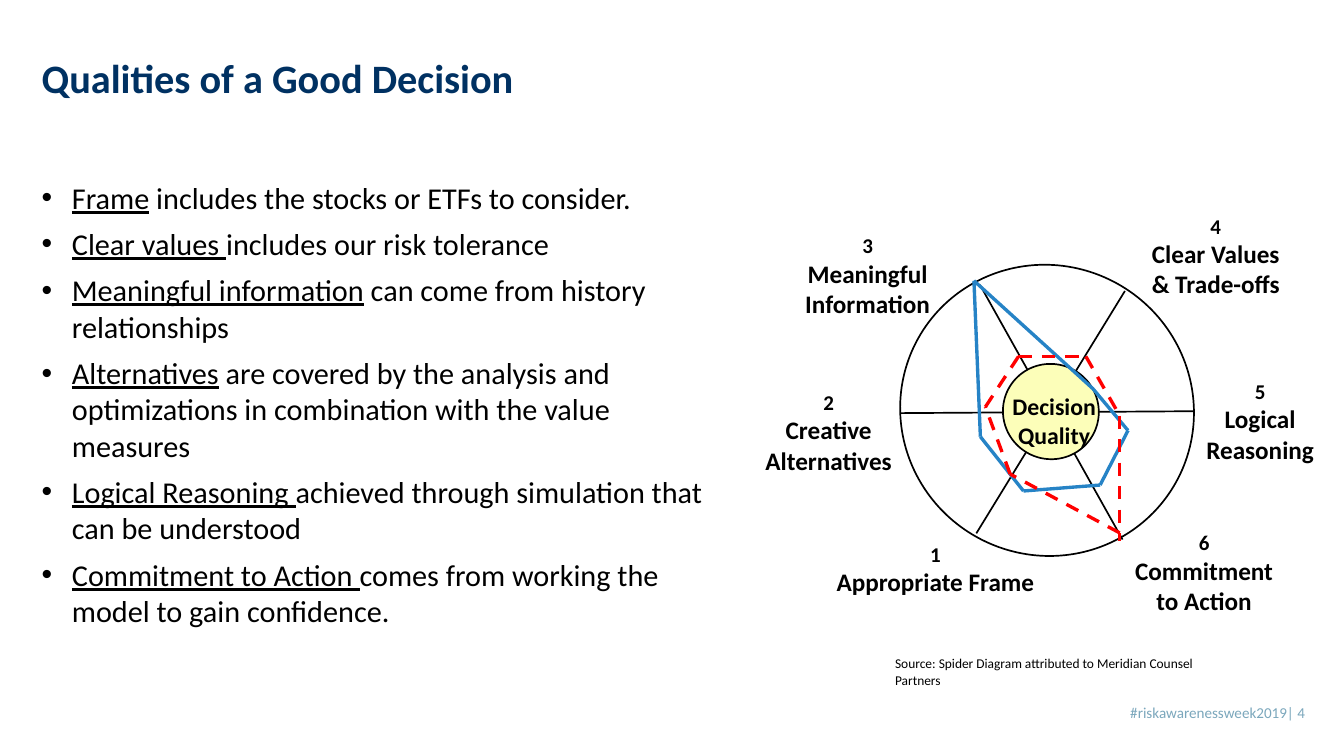
"""Build the slide on the qualities of a good decision, with its spider diagram."""
from itertools import pairwise

from pptx import Presentation
from pptx import util as u
from pptx.dml.color import RGBColor
from pptx.enum import dml, shapes, text
from pptx.oxml.ns import qn
from lxml import etree

TITLE = "Qualities of a Good Decision"
QUALITIES = [
    ("Frame", " includes the stocks or ETFs to consider."),
    ("Clear values ", "includes our risk tolerance"),
    ("Meaningful information", " can come from history relationships"),
    ("Alternatives", " are covered by the analysis and optimizations in combination with the value measures"),
    ("Logical Reasoning ", "achieved through simulation that can be understood"),
    ("Commitment to Action ", "comes from working the model to gain confidence."),
]
HUB = ["Decision", "Quality"]
SPOKE_LABELS = [
    (["1", "Appropriate Frame"], (34.8, 22.58, 8.97, 2.64)),
    (["2", "Creative", "Alternatives"], (31.7, 16.21, 6.2, 3.94)),
    (["3", "Meaningful", "Information"], (33.4, 9.63, 6.07, 3.94)),
    (["4", "Clear Values", "& Trade-offs"], (48.03, 8.81, 6.05, 3.94)),
    (["5", "Logical", "Reasoning"], (50.34, 15.75, 5.16, 3.94)),
    (["6", "Commitment", "to Action"], (47.35, 22.1, 6.43, 3.94)),
]
SPOKES = [
    [(41.15, 11.96), (47.14, 22.66)],
    [(37.82, 17.35), (50.14, 17.27)],
    [(47.24, 12.22), (41, 22.4)],
]
SOLID_PROFILE = [(41.17, 18.34), (40.9, 11.79), (45.9, 16.33), (47.37, 18.08),
                 (46.2, 20.37), (42.98, 20.62), (41.17, 18.34)]
DASHED_PROFILE = [(47.02, 22.38), (42.42, 19.91), (41.38, 17.09), (42.77, 14.97),
                  (45.6, 14.97), (47.02, 17.45), (47.02, 22.73)]
SOURCE = "Source: Spider Diagram attributed to Meridian Counsel Partners"
FOOTER = "#riskawarenessweek2019| 4"

THEME = {
    "font": "Calibri",
    "ink": "000000", "title": "003162", "footer": "7BA7BC", "rim": "FFFFFF",
    "hub": "FCFEB9", "solid": "2683C6", "dashed": "FF0000",
    "title_size": 48, "body_size": 36, "label_size": 30, "hub_size": 28.3,
    "number_size": 25, "footer_size": 18, "source_size": 16,
    "thin": 2, "thick": 4,
}
DEFAULT_INSETS = (0.25, 0.13)
LABEL_INSETS = (0.28, 0.15)
SOURCE_INSETS = (0.43, 0.2)


def color(name):
    return RGBColor.from_string(THEME[name])


def format_run(run, size, ink="ink", bold=False, underline=False):
    font = run.font
    font.name = THEME["font"]
    font.size = u.Pt(THEME[size])
    font.color.rgb = color(ink)
    font.bold = bold
    font.underline = underline


def add_text(slide, box, lines, sizes, ink="ink", bold=False, align=text.PP_ALIGN.LEFT,
             insets=DEFAULT_INSETS, wrap=True):
    frame = slide.shapes.add_textbox(*map(u.Cm, box)).text_frame
    frame.word_wrap = wrap
    frame.margin_left = frame.margin_right = u.Cm(insets[0])
    frame.margin_top = frame.margin_bottom = u.Cm(insets[1])
    frame.text = "\n".join(lines)
    for paragraph, size in zip(frame.paragraphs, sizes):
        paragraph.alignment = align
        format_run(paragraph.runs[0], size, ink, bold)
    return frame


def add_bullets(slide, box, items):
    frame = slide.shapes.add_textbox(*map(u.Cm, box)).text_frame
    frame.word_wrap = True
    for index, (lead, rest) in enumerate(items):
        paragraph = frame.add_paragraph() if index else frame.paragraphs[0]
        properties = paragraph._p.get_or_add_pPr()
        properties.set("marL", str(u.Cm(1.27)))
        properties.set("indent", str(u.Cm(-1.27)))
        etree.SubElement(properties, qn("a:buFont")).set("typeface", "Arial")
        etree.SubElement(properties, qn("a:buChar")).set("char", "•")
        paragraph.space_before = u.Pt(6 if index else 0)
        paragraph.space_after = u.Pt(6)
        for words, underline in ((lead, True), (rest, False)):
            run = paragraph.add_run()
            run.text = words
            format_run(run, "body_size", underline=underline)


def add_circle(slide, box, fill):
    circle = slide.shapes.add_shape(shapes.MSO_SHAPE.OVAL, *map(u.Cm, box))
    circle.rotation = 31
    circle.shadow.inherit = False
    circle.fill.solid()
    circle.fill.fore_color.rgb = color(fill)
    circle.line.color.rgb = color("ink")
    circle.line.width = u.Pt(THEME["thin"])


def add_path(slide, points, ink, width, dash=None):
    for start, end in pairwise(points):
        segment = slide.shapes.add_connector(
            shapes.MSO_CONNECTOR.STRAIGHT, *map(u.Cm, start + end))
        segment.line.color.rgb = color(ink)
        segment.line.width = u.Pt(THEME[width])
        segment.line.dash_style = dash
        etree.SubElement(segment._element.spPr, qn("a:effectLst"))


def main():
    presentation = Presentation()
    presentation.slide_width, presentation.slide_height = u.Cm(56.44), u.Cm(31.75)
    slide = presentation.slides.add_slide(presentation.slide_layouts[6])
    center = text.PP_ALIGN.CENTER

    add_text(slide, (19.63, 29.41, 35.43, 1.02), [FOOTER], ["footer_size"], "footer",
             align=text.PP_ALIGN.RIGHT)
    title = add_text(slide, (1.5, 1.63, 49.61, 3.51), [TITLE], ["title_size"], "title", True)
    title.vertical_anchor = text.MSO_ANCHOR.MIDDLE
    title.paragraphs[0].line_spacing = 0.9
    add_bullets(slide, (1.5, 7.39, 29.54, 18.64), QUALITIES)

    add_circle(slide, (37.77, 11.15, 12.4, 12.17), "rim")
    for spoke in SPOKES:
        add_path(slide, spoke, "ink", "thin")
    add_circle(slide, (42.11, 15.29, 4.04, 3.99), "hub")
    add_text(slide, (41.73, 16.31, 5.08, 2.72), HUB, ["hub_size"] * 2, bold=True,
             align=center, insets=LABEL_INSETS)
    for lines, box in SPOKE_LABELS:
        add_text(slide, box, lines, ["number_size", "label_size", "label_size"], bold=True,
                 align=center, insets=LABEL_INSETS, wrap=False)
    add_path(slide, SOLID_PROFILE, "solid", "thick")
    add_path(slide, DASHED_PROFILE, "dashed", "thick", dml.MSO_LINE.DASH)
    add_text(slide, (37.16, 27.33, 15.24, 1.12), [SOURCE], ["source_size"],
             insets=SOURCE_INSETS)

    presentation.save("out.pptx")


if __name__ == "__main__":
    main()
